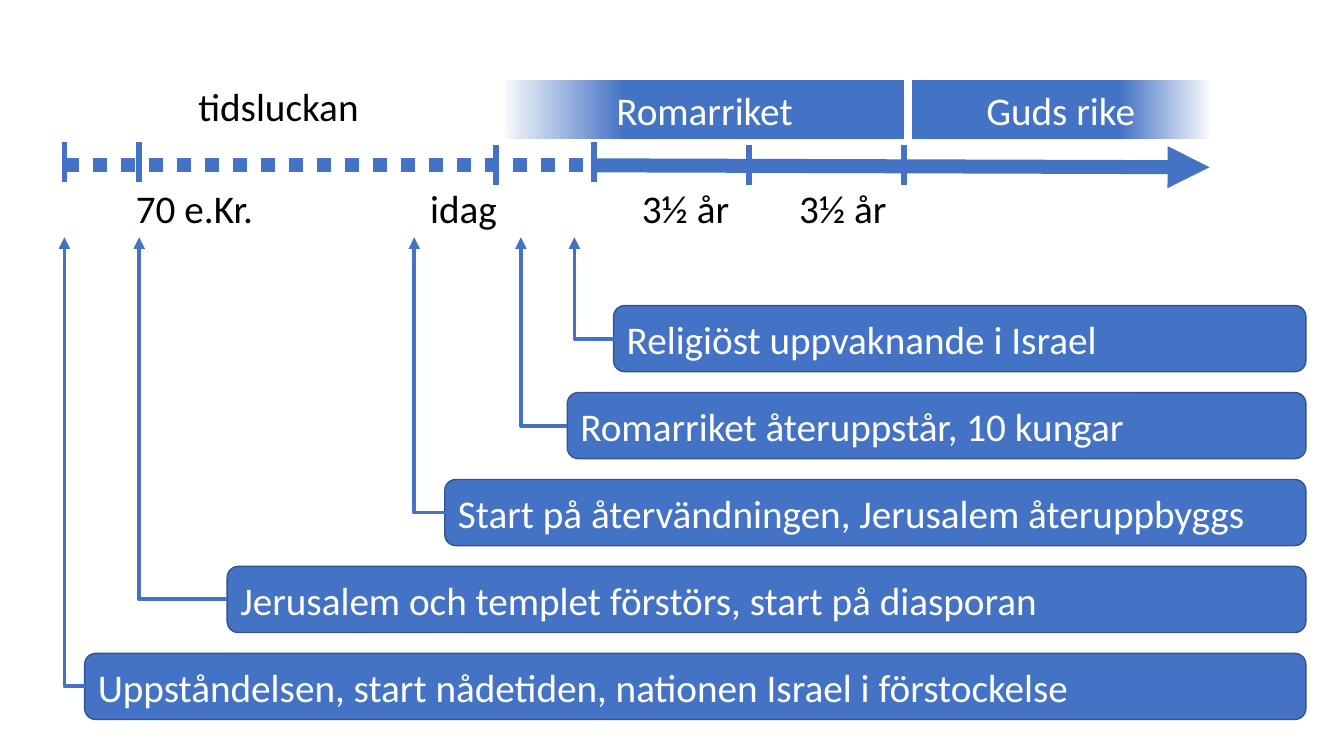
from dataclasses import dataclass

from lxml import etree
from pptx import Presentation
from pptx.dml.color import RGBColor
from pptx.enum.dml import MSO_LINE
from pptx.enum.shapes import MSO_CONNECTOR, MSO_SHAPE
from pptx.enum.text import MSO_ANCHOR, MSO_AUTO_SIZE, PP_ALIGN
from pptx.oxml.ns import qn
from pptx.shapes.autoshape import Shape
from pptx.shapes.connector import Connector
from pptx.slide import Slide
from pptx.util import Pt

STRAIGHT, ELBOW = MSO_CONNECTOR.STRAIGHT, MSO_CONNECTOR.ELBOW
RECT, ROUNDED = MSO_SHAPE.RECTANGLE, MSO_SHAPE.ROUNDED_RECTANGLE
DOTTED = MSO_LINE.ROUND_DOT
MIDDLE = MSO_ANCHOR.MIDDLE
LEFT, CENTER = PP_ALIGN.LEFT, PP_ALIGN.CENTER
FIT_SHAPE = MSO_AUTO_SIZE.SHAPE_TO_FIT_TEXT

COLORS = {
    "blue": "4472C4",
    "edge": "325491",
    "fade": "F6F8FC",
    "white": "FFFFFF",
    "black": "000000",
}
FONT, FONT_SIZE = "Calibri", 28
TICK_HEIGHT = 28.8
LABEL_HEIGHT = 41.2
ERA_TOP, ERA_HEIGHT = 57, 42.7
EVENT_TOP, EVENT_STEP, EVENT_HEIGHT, EVENT_RIGHT = 218.3, 62.1, 47.2, 932.8
ARROW_TIP = 169.5
LEFT_SITE = 1


@dataclass
class Tick:
    x: float
    top: float


@dataclass
class Label:
    text: str
    left: float
    top: float
    width: float


@dataclass
class Era:
    text: str
    left: float
    width: float
    angle: int


@dataclass
class Event:
    text: str
    left: float
    arrow_x: float


TICKS = [
    Tick(46.1, 101.5),
    Tick(99.4, 101.5),
    Tick(354.2, 103.7),
    Tick(424.1, 101.5),
    Tick(535, 103.7),
    Tick(645.8, 103.7),
]
LABELS = [
    Label("tidsluckan", 134.6, 55.4, 130.3),
    Label("70 e.Kr.", 90, 128.2, 99.4),
    Label("idag", 300.2, 128.2, 62.6),
    Label("3½ år", 451.4, 128.2, 77.8),
    Label("3½ år", 563.8, 128.2, 77.8),
]
ERAS = [
    Era("Romarriket", 360.7, 285.1, 0),
    Era("Guds rike", 651.8, 211.7, 180),
]
EVENTS = [
    Event("Religiöst uppvaknande i Israel", 438.3, 410.4),
    Event("Romarriket återuppstår, 10 kungar", 405.2, 372.2),
    Event("Start på återvändningen, Jerusalem återuppbyggs", 317.7, 295.9),
    Event("Jerusalem och templet förstörs, start på diasporan", 162.3, 99.4),
    Event("Uppståndelsen, start nådetiden, nationen Israel i förstockelse", 60.5, 46.1),
]


def rgb(name: str) -> RGBColor:
    return RGBColor.from_string(COLORS[name])


def write(sp: Shape, text: str, color: str, align: PP_ALIGN) -> None:
    p = sp.text_frame.paragraphs[0]
    p.text = text
    p.alignment = align
    p.font.name = FONT
    p.font.size = Pt(FONT_SIZE)
    p.font.color.rgb = rgb(color)


def add_line(slide: Slide, kind: MSO_CONNECTOR, x1: float, y1: float,
             x2: float, y2: float, width: float) -> Connector:
    line = slide.shapes.add_connector(kind, Pt(x1), Pt(y1), Pt(x2), Pt(y2))
    line.line.color.rgb = rgb("blue")
    line.line.width = Pt(width)
    etree.SubElement(line._element.spPr, qn("a:effectLst"))
    return line


def add_arrowhead(line: Connector) -> None:
    etree.SubElement(line.line._get_or_add_ln(), qn("a:tailEnd"), type="triangle")


def add_timeline(slide: Slide) -> None:
    add_arrowhead(add_line(slide, STRAIGHT, 424.1, 118.1, 864, 119.5, 10))
    gap = add_line(slide, STRAIGHT, 46.1, 118.1, 422.6, 118.1, 10)
    gap.line.dash_style = DOTTED


def add_tick(slide: Slide, tick: Tick) -> None:
    add_line(slide, STRAIGHT, tick.x, tick.top, tick.x, tick.top + TICK_HEIGHT, 4)


def add_label(slide: Slide, label: Label) -> None:
    sp = slide.shapes.add_textbox(
        Pt(label.left), Pt(label.top), Pt(label.width), Pt(LABEL_HEIGHT))
    sp.text_frame.word_wrap = False
    sp.text_frame.auto_size = FIT_SHAPE
    write(sp, label.text, "black", LEFT)


def add_box(slide: Slide, kind: MSO_SHAPE, left: float, top: float,
            width: float, height: float) -> Shape:
    sp = slide.shapes.add_shape(kind, Pt(left), Pt(top), Pt(width), Pt(height))
    sp.shadow.inherit = False
    sp.text_frame.word_wrap = True
    sp.text_frame.vertical_anchor = MIDDLE
    return sp


def add_era(slide: Slide, era: Era) -> None:
    sp = add_box(slide, RECT, era.left, ERA_TOP, era.width, ERA_HEIGHT)
    sp.line.fill.background()
    sp.fill.gradient()
    sp.fill.gradient_angle = era.angle
    for stop, color, position in zip(sp.fill.gradient_stops, ("fade", "blue"), (0, 0.3)):
        stop.color.rgb = rgb(color)
        stop.position = position
    write(sp, era.text, "white", CENTER)


def add_event(slide: Slide, event: Event, top: float) -> None:
    sp = add_box(slide, ROUNDED, event.left, top, EVENT_RIGHT - event.left, EVENT_HEIGHT)
    sp.fill.solid()
    sp.fill.fore_color.rgb = rgb("blue")
    sp.line.color.rgb = rgb("edge")
    sp.line.width = Pt(1)
    write(sp, event.text, "white", LEFT)
    arrow = add_line(slide, ELBOW, event.left, top + EVENT_HEIGHT / 2,
                     event.arrow_x, ARROW_TIP, 2.75)
    arrow.begin_connect(sp, LEFT_SITE)
    arrow._element.spPr.find(qn("a:prstGeom")).set("prst", "bentConnector2")
    add_arrowhead(arrow)


def main() -> None:
    prs = Presentation()
    prs.slide_width, prs.slide_height = Pt(960), Pt(540)
    slide = prs.slides.add_slide(prs.slide_layouts[6])
    add_timeline(slide)
    for tick in TICKS:
        add_tick(slide, tick)
    for label in LABELS:
        add_label(slide, label)
    for era in ERAS:
        add_era(slide, era)
    for i, event in enumerate(EVENTS):
        add_event(slide, event, EVENT_TOP + i * EVENT_STEP)
    prs.save("out.pptx")


if __name__ == "__main__":
    main()
